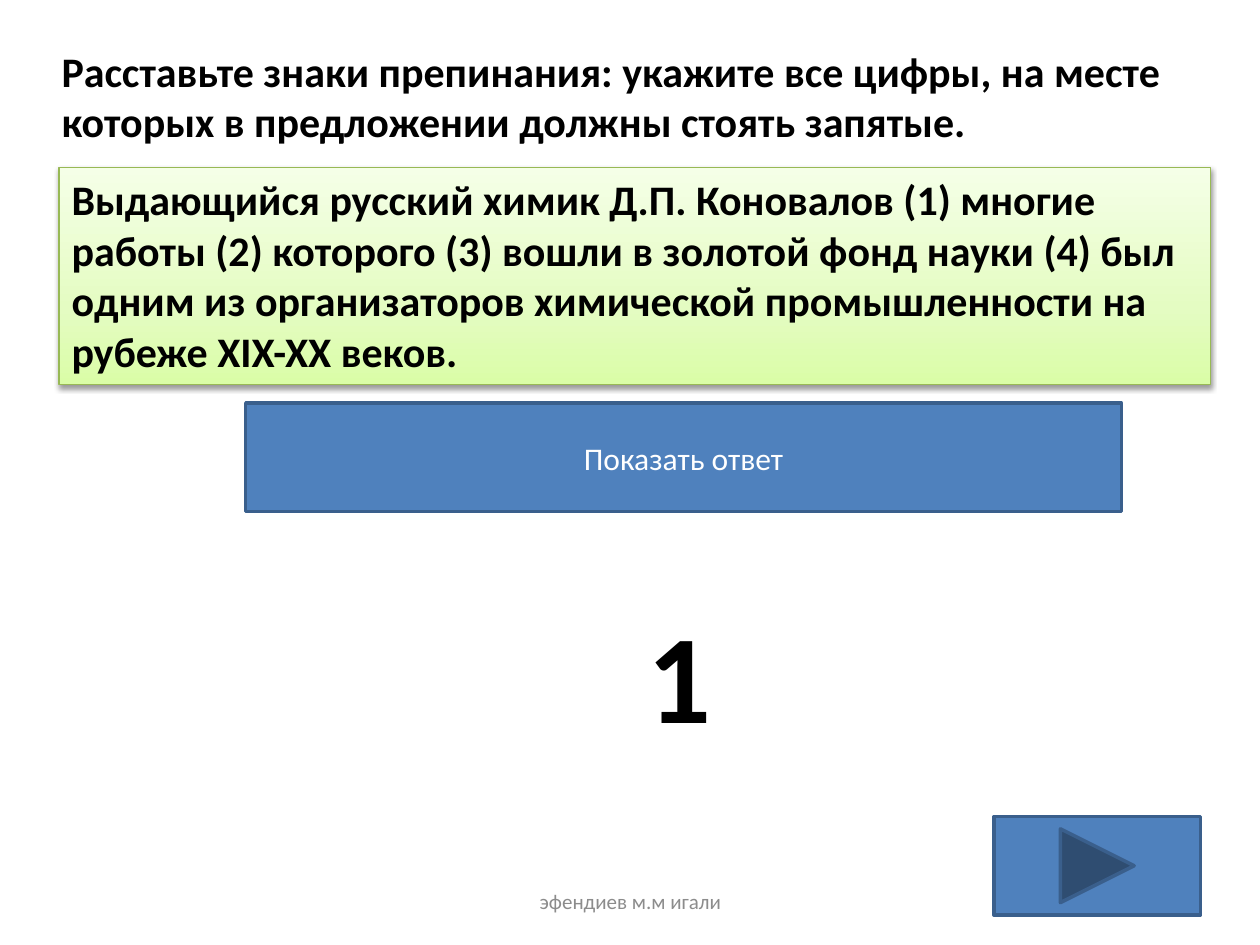
from lxml import etree
from pptx import Presentation
from pptx.dml.color import RGBColor
from pptx.enum.shapes import MSO_SHAPE
from pptx.enum.text import MSO_ANCHOR, MSO_AUTO_SIZE, PP_ALIGN
from pptx.oxml.ns import qn
from pptx.util import Pt

RECT = MSO_SHAPE.RECTANGLE
BLANK_BUTTON = MSO_SHAPE.ACTION_BUTTON_CUSTOM
NEXT_BUTTON = MSO_SHAPE.ACTION_BUTTON_FORWARD_OR_NEXT
LEFT, CENTER = PP_ALIGN.LEFT, PP_ALIGN.CENTER
TOP, MIDDLE = MSO_ANCHOR.TOP, MSO_ANCHOR.MIDDLE

FONT = "Calibri"
COLORS = {
    "text": "000000",
    "white": "FFFFFF",
    "footer": "8C8C8C",
    "button": "4F81BD",
    "button_line": "3A5F8C",
    "panel_line": "98B955",
    "shadow": "000000",
}
PANEL_STOPS = [(0, "DAFDA7"), (35, "E4FCC2"), (100, "F5FFE7")]


def rgb(name):
    return RGBColor.from_string(COLORS[name])


def write_text(sp, text, size=24, color="text", bold=False, align=LEFT, anchor=TOP):
    tf = sp.text_frame
    tf.word_wrap = True
    tf.auto_size = MSO_AUTO_SIZE.NONE
    tf.vertical_anchor = anchor
    p = tf.paragraphs[0]
    p.alignment = align
    r = p.add_run()
    r.text = text
    r.font.name = FONT
    r.font.size = Pt(size)
    r.font.bold = bold
    r.font.color.rgb = rgb(color)


def place(sp, box):
    sp.left, sp.top, sp.width, sp.height = map(Pt, box)


def add_box(slide, kind, box, line, line_width):
    sp = slide.shapes.add_shape(kind, *map(Pt, box))
    sp.shadow.inherit = False
    sp.line.color.rgb = rgb(line)
    sp.line.width = Pt(line_width)
    return sp


def add_color(parent, color):
    return etree.SubElement(parent, qn("a:srgbClr"), val=color)


def fill_gradient(sp, stops, angle):
    sp.fill.gradient()
    sp.fill.gradient_angle = angle
    stop_list = sp._element.spPr.find(".//" + qn("a:gsLst"))
    for old in list(stop_list):
        stop_list.remove(old)
    for position, color in stops:
        add_color(etree.SubElement(stop_list, qn("a:gs"), pos=str(position * 1000)), color)


def drop_shadow(sp, blur, distance, opacity):
    effects = sp._element.spPr.find(qn("a:effectLst"))
    shadow = etree.SubElement(
        effects, qn("a:outerShdw"), blurRad=str(Pt(blur)), dist=str(Pt(distance)),
        dir="5400000", rotWithShape="0")
    color = add_color(shadow, COLORS["shadow"])
    etree.SubElement(color, qn("a:alpha"), val=str(opacity * 1000))


def add_task(slide, box, text):
    title = slide.shapes.title
    place(title, box)
    write_text(title, text, bold=True)


def add_sentence(slide, box, text):
    sp = add_box(slide, RECT, box, "panel_line", 0.75)
    fill_gradient(sp, PANEL_STOPS, 90)
    drop_shadow(sp, blur=3.1, distance=1.6, opacity=38)
    write_text(sp, text, bold=True)


def add_button(slide, kind, box, text=None):
    sp = add_box(slide, kind, box, "button_line", 2)
    sp.fill.solid()
    sp.fill.fore_color.rgb = rgb("button")
    if text:
        write_text(sp, text, size=18, color="white", align=CENTER, anchor=MIDDLE)


def add_label(slide, box, text, **text_format):
    sp = slide.shapes.add_textbox(*map(Pt, box))
    write_text(sp, text, align=CENTER, **text_format)


def build_question(slide):
    add_task(slide, (28, 22.3, 669.6, 65.5),
             "Расставьте знаки препинания: укажите все цифры, на месте "
             "которых в предложении должны стоять запятые.")
    add_sentence(slide, (33.8, 95.8, 658, 123.8),
                 "Выдающийся русский химик Д.П. Коновалов (1) многие работы (2) "
                 "которого (3) вошли в золотой фонд науки (4) был одним из "
                 "организаторов химической промышленности на рубеже XIX-XX веков.")
    add_button(slide, BLANK_BUTTON, (140.4, 230.4, 500.4, 62), "Показать ответ")
    add_label(slide, (140.4, 337.7, 495.4, 94.3), "1", size=72, bold=True)
    add_label(slide, (246.2, 500.4, 228.2, 28.8), "эфендиев м.м игали",
              size=12, color="footer", anchor=MIDDLE)
    add_button(slide, NEXT_BUTTON, (568, 466.6, 118, 56.2))


def main():
    prs = Presentation()
    prs.slide_width, prs.slide_height = Pt(720), Pt(540)
    title_only = prs.slide_layouts[5]
    build_question(prs.slides.add_slide(title_only))
    prs.save("out.pptx")


if __name__ == "__main__":
    main()
